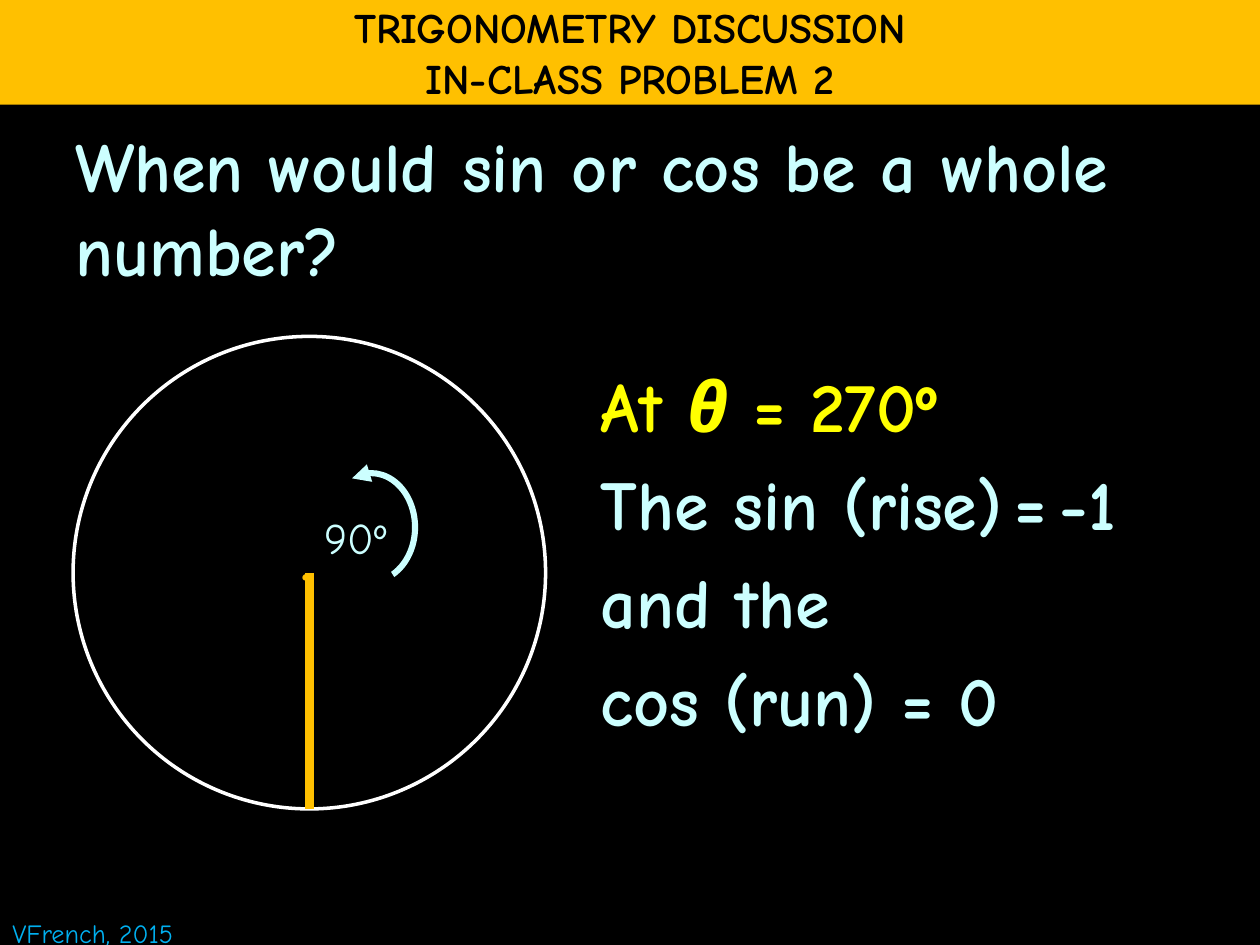
from lxml import etree
from pptx import Presentation
from pptx.dml.color import RGBColor
from pptx.enum import shapes, text
from pptx.oxml import ns
from pptx.util import Inches, Pt

FONT = "Comic Neue"
BLACK = RGBColor(0, 0, 0)
WHITE = RGBColor(255, 255, 255)
GOLD = RGBColor(0xFF, 0xC0, 0x00)
YELLOW = RGBColor(0xFF, 0xFF, 0x00)
PALE = RGBColor(0xCC, 0xFF, 0xFF)
BLUE = RGBColor(0x00, 0xB0, 0xF0)


def add_span(para, words, size, color, bold=False, italic=False):
    span = para.add_run()
    span.text = words
    font = span.font
    font.name, font.size = FONT, Pt(size)
    font.bold, font.italic = bold, italic
    font.color.rgb = color


def write(frame, lines, wrap=True, align=text.PP_ALIGN.LEFT, before=0):
    """Fill a frame; each line is a list of (words, size, color, ...) spans."""
    frame.word_wrap = wrap
    frame.auto_size = text.MSO_AUTO_SIZE.NONE
    for index, spans in enumerate(lines):
        para = frame.paragraphs[0] if index == 0 else frame.add_paragraph()
        para.alignment = align
        para.space_before = Pt(before)
        for span in spans:
            add_span(para, *span)


def add_text(page, left, top, width, height, lines, **options):
    box = page.shapes.add_textbox(Inches(left), Inches(top), Inches(width), Inches(height))
    write(box.text_frame, lines, **options)


def add_outline(page, kind, left, top, width, height, color, weight):
    shape = page.shapes.add_shape(kind, Inches(left), Inches(top), Inches(width), Inches(height))
    shape.shadow.inherit = False
    shape.fill.background()
    shape.line.color.rgb = color
    shape.line.width = Pt(weight)
    return shape


def add_banner(page, left, top, width, height):
    title = page.shapes.title
    title.left, title.top = Inches(left), Inches(top)
    title.width, title.height = Inches(width), Inches(height)
    title.fill.solid()
    title.fill.fore_color.rgb = GOLD
    title.text_frame.vertical_anchor = text.MSO_ANCHOR.MIDDLE
    lines = ["TRIGONOMETRY DISCUSSION", "IN-CLASS PROBLEM 2"]
    write(title.text_frame, [[(line, 24, BLACK, True)] for line in lines],
          wrap=False, align=text.PP_ALIGN.CENTER)


def add_circle_diagram(page, left, top, size):
    middle, center = left + size / 2, top + size / 2
    add_outline(page, shapes.MSO_SHAPE.OVAL, left, top, size, size, WHITE, 2)

    # Center point and angle label
    add_text(page, middle - 0.17, center - 0.54, 0.34, 0.77, [[(".", 40, GOLD)]], wrap=False)
    add_text(page, middle + 0.02, center - 0.54, 0.93, 0.52, [[("90º", 25, PALE)]])

    # Counterclockwise arrow
    arc = add_outline(page, shapes.MSO_SHAPE.ARC, middle + 0.14, center - 0.79, 0.7, 0.86, PALE, 3.5)
    arc.adjustments[0] = 149.286
    arc.adjustments[1] = 39.202
    etree.SubElement(arc.line._get_or_add_ln(), ns.qn("a:headEnd"), type="triangle")

    # Radius at 270 degrees
    radius = page.shapes.add_connector(shapes.MSO_CONNECTOR.STRAIGHT, Inches(middle),
                                       Inches(top + size), Inches(middle), Inches(center))
    radius.line.color.rgb = GOLD
    radius.line.width = Pt(5)
    etree.SubElement(radius._element.spPr, ns.qn("a:effectLst"))


def add_answer(page, left, top, width, height):
    lines = [
        [("At ", 40, YELLOW, True), ("θ ", 40, YELLOW, True, True), ("= 270º", 40, YELLOW, True)],
        [("The sin (rise)", 40, PALE, True), (" ", 20, PALE, True), ("=", 40, PALE, True),
         (" ", 20, PALE, True), ("-1", 40, PALE, True)],
        [("and the", 40, PALE, True)],
        [("cos (run) = 0", 40, PALE, True)],
    ]
    add_text(page, left, top, width, height, lines, before=8)


def main():
    deck = Presentation()
    deck.slide_width, deck.slide_height = Inches(10), Inches(7.5)
    page = deck.slides.add_slide(deck.slide_layouts[5])
    page.background.fill.solid()
    page.background.fill.fore_color.rgb = BLACK

    add_banner(page, 0, 0, 10, 0.83)
    question = "When would sin or cos be a whole number?"
    add_text(page, 0.5, 0.92, 9, 6.17, [[(question, 40, PALE, True)]], before=8)
    add_circle_diagram(page, 0.58, 2.67, 3.75)
    add_text(page, 0, 7.23, 1.69, 0.35, [[("VFrench, 2015", 15, BLUE)]], wrap=False)
    add_answer(page, 4.67, 2.83, 5.25, 3.17)
    deck.save("out.pptx")


if __name__ == "__main__":
    main()
